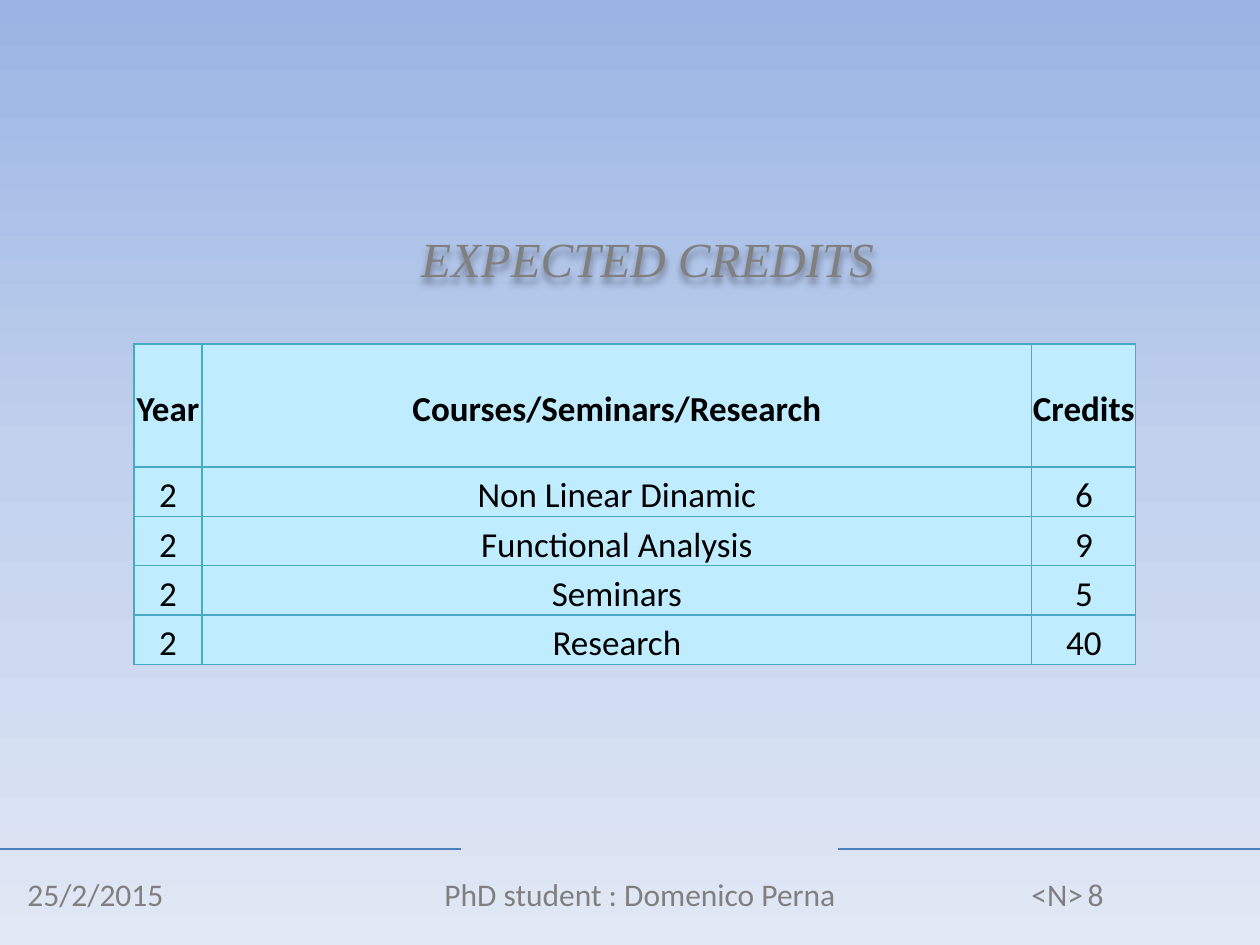
from lxml.etree import SubElement
from pptx import Presentation
from pptx.dml.color import RGBColor
from pptx.enum.text import MSO_ANCHOR, PP_ALIGN
from pptx.enum.shapes import MSO_CONNECTOR
from pptx.oxml.ns import qn
from pptx.util import Emu, Pt

PX = 914400 // 126
COLORS = {"grey": "808080", "rule": "4B7EBC", "border": "46AAC5",
          "cell": "BFEDFF", "black": "000000"}
BACKGROUND = [(0, "9AB5E4"), (50, "C2D1ED"), (100, "E1E8F5")]

# text, (left, top, width, height), alignment, size, font, italic
TITLE = ("EXPECTED CREDITS", (194, 222, 907, 72), PP_ALIGN.CENTER, 28, "Times New Roman", True)
FOOTER = [
    ("25/2/2015", (15, 869, 258, 50), PP_ALIGN.LEFT, 18, "Calibri", False),
    ("PhD student : Domenico Perna", (432, 869, 476, 50), PP_ALIGN.LEFT, 18, "Calibri", False),
    ("<N>", (1019, 869, 216, 50), PP_ALIGN.LEFT, 18, "Calibri", False),
    ("8", (1066, 869, 59, 50), PP_ALIGN.CENTER, 18, "Calibri", False),
]
RULE_Y = 849
RULES = [(0, 461), (838, 1260)]

TABLE_LEFT, TABLE_TOP = 134, 344
COL_WIDTHS = [68, 830, 104]
HEADER_HEIGHT, ROW_HEIGHT = 123, 49
CREDITS = [
    ("Year", "Courses/Seminars/Research", "Credits"),
    ("2", "Non Linear Dinamic", "6"),
    ("2", "Functional Analysis", "9"),
    ("2", "Seminars", "5"),
    ("2", "Research", "40"),
]


def px(n):
    return Emu(n * PX)


def rgb(name):
    return RGBColor.from_string(COLORS[name])


def add_color(parent, value):
    return SubElement(parent, qn("a:srgbClr"), val=value)


def set_background(s):
    fill = s.background.fill
    fill.gradient()
    fill.gradient_angle = 270
    stops = s.element.find(".//" + qn("a:gsLst"))
    for stop in list(stops):
        stops.remove(stop)
    for position, value in BACKGROUND:
        add_color(SubElement(stops, qn("a:gs"), pos=str(position * 1000)), value)


def add_rule(s, start, end):
    line = s.shapes.add_connector(MSO_CONNECTOR.STRAIGHT, px(start), px(RULE_Y), px(end), px(RULE_Y))
    line.line.color.rgb = rgb("rule")
    line.line.width = Pt(0.75)
    SubElement(line._element.spPr, qn("a:effectLst"))


def add_text(s, text, box, align, size, font, italic):
    sp = s.shapes.add_textbox(*map(px, box))
    tf = sp.text_frame
    tf.word_wrap = True
    tf.text = text
    p = tf.paragraphs[0]
    p.alignment = align
    f = p.runs[0].font
    f.size, f.name, f.italic = Pt(size), font, italic
    f.color.rgb = rgb("grey")
    return sp


def add_shadow(sp):
    effects = SubElement(sp._element.spPr, qn("a:effectLst"))
    shadow = SubElement(effects, qn("a:outerShdw"), blurRad="50800", dist="38100",
                        dir="5400000", algn="t", rotWithShape="0")
    SubElement(add_color(shadow, COLORS["black"]), qn("a:alpha"), val="40000")


def set_borders(cell):
    tcPr = cell._tc.get_or_add_tcPr()
    for i, side in enumerate(("lnL", "lnR", "lnT", "lnB")):
        ln = SubElement(tcPr, qn("a:" + side), w=str(Pt(0.75)))
        add_color(SubElement(ln, qn("a:solidFill")), COLORS["border"])
        tcPr.insert(i, ln)


def format_cell(cell, text, header, last_column):
    cell.text = text
    cell.margin_left = cell.margin_right = cell.margin_top = px(1)
    cell.margin_bottom = 0
    cell.vertical_anchor = MSO_ANCHOR.MIDDLE if header or last_column else MSO_ANCHOR.BOTTOM
    cell.fill.solid()
    cell.fill.fore_color.rgb = rgb("cell")
    set_borders(cell)
    p = cell.text_frame.paragraphs[0]
    p.alignment = PP_ALIGN.CENTER
    p.line_spacing = 1.15
    p.space_after = Pt(10)
    f = p.runs[0].font
    f.size, f.name, f.bold = Pt(20), "Calibri", header
    f.color.rgb = rgb("black")


def add_credits_table(s):
    heights = [HEADER_HEIGHT] + [ROW_HEIGHT] * (len(CREDITS) - 1)
    table = s.shapes.add_table(len(CREDITS), len(COL_WIDTHS), px(TABLE_LEFT), px(TABLE_TOP),
                               px(sum(COL_WIDTHS)), px(sum(heights))).table
    for column, width in zip(table.columns, COL_WIDTHS):
        column.width = px(width)
    for r, (height, row) in enumerate(zip(heights, CREDITS)):
        table.rows[r].height = px(height)
        for c, text in enumerate(row):
            format_cell(table.cell(r, c), text, r == 0, c == len(row) - 1)


def main():
    prs = Presentation()
    prs.slide_width, prs.slide_height = px(1260), px(945)
    s = prs.slides.add_slide(prs.slide_layouts[6])
    set_background(s)
    for start, end in RULES:
        add_rule(s, start, end)
    for item in FOOTER:
        add_text(s, *item)
    add_shadow(add_text(s, *TITLE))
    add_credits_table(s)
    prs.save("out.pptx")


if __name__ == "__main__":
    main()
